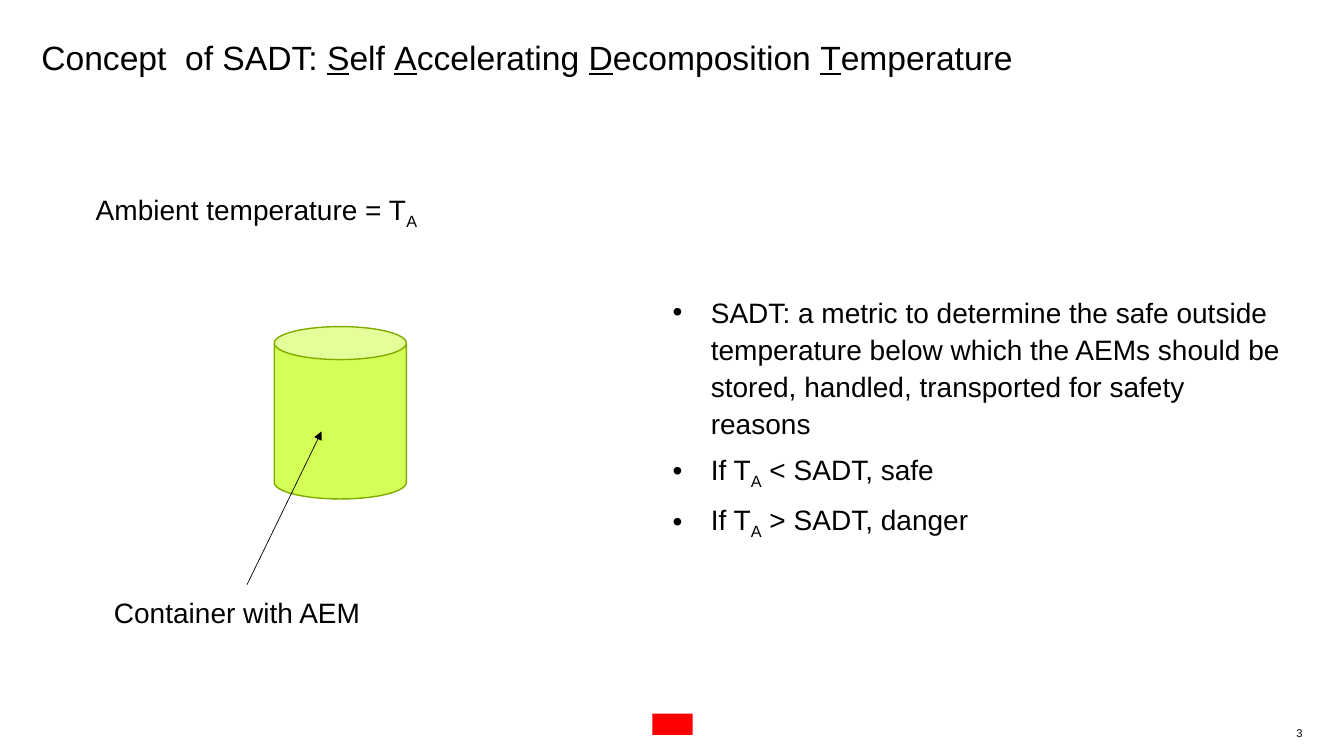
from lxml import etree
from pptx import Presentation
from pptx.dml.color import RGBColor
from pptx.enum import shapes, text
from pptx.oxml.ns import qn
from pptx.util import Inches, Pt

FONT = "Arial"
BLACK, RED, LIME, OLIVE = "000000", "FF0000", "D3FF57", "80AC00"

TITLE = [("Concept  of SADT: ", ""), ("S", "under"), ("elf ", ""), ("A", "under"),
         ("ccelerating ", ""), ("D", "under"), ("ecomposition ", ""),
         ("T", "under"), ("emperature", "")]
POINTS = [
    [("SADT: a metric to determine the safe outside temperature below which "
      "the AEMs should be stored, handled, transported for safety reasons", "")],
    [("If T", ""), ("A", "sub"), (" < SADT, safe", "")],
    [("If T", ""), ("A", "sub"), (" > SADT, danger", "")],
]
AMBIENT = [("Ambient temperature = T", ""), ("A", "sub")]
CONTAINER = [("Container with AEM", "")]
PAGE = [("3", "")]

TITLE_BOX = (0.41, 0.41, 12.49, 0.9)
POINTS_BOX = (6.67, 1.42, 6.25, 5.42)
AMBIENT_BOX = (0.95, 1.91, 3.4, 0.34)
CONTAINER_BOX = (1.13, 5.91, 2.65, 0.34)
PAGE_BOX = (12.68, 7.21, 0.24, 0.13)
CAN_BOX = (2.72, 3.24, 1.31, 1.71)
MARK_BOX = (6.47, 7.08, 0.4, 0.21)
ARROW = (2.45, 5.8, 3.19, 4.28)


def inches(values):
    return [Inches(value) for value in values]


def color(hex_string):
    return RGBColor.from_string(hex_string)


def add_runs(paragraph, pieces, size):
    for words, style in pieces:
        run = paragraph.add_run()
        run.text = words
        run.font.name = FONT
        run.font.size = Pt(size)
        run.font.color.rgb = color(BLACK)
        if style == "under":
            run.font.underline = True
        elif style == "sub":
            run.font._element.set("baseline", "-25000")


def clear_frame(shape, anchor=text.MSO_ANCHOR.TOP, right=0):
    frame = shape.text_frame
    frame.word_wrap = True
    frame.auto_size = text.MSO_AUTO_SIZE.NONE
    frame.vertical_anchor = anchor
    frame.margin_left = frame.margin_top = frame.margin_bottom = 0
    frame.margin_right = Inches(right)
    return frame


def add_label(slide, box, pieces, size, align=text.PP_ALIGN.LEFT):
    frame = clear_frame(slide.shapes.add_textbox(*inches(box)))
    frame.paragraphs[0].alignment = align
    add_runs(frame.paragraphs[0], pieces, size)


def add_filled(slide, kind, box, fill, line=None):
    shape = slide.shapes.add_shape(kind, *inches(box))
    shape.shadow.inherit = False
    shape.fill.solid()
    shape.fill.fore_color.rgb = color(fill)
    if line:
        shape.line.color.rgb = color(line)
        shape.line.width = Pt(1)
    else:
        shape.line.fill.background()


def add_title(slide):
    title = slide.shapes.title
    title.left, title.top, title.width, title.height = inches(TITLE_BOX)
    paragraph = clear_frame(title).paragraphs[0]
    paragraph.alignment = text.PP_ALIGN.LEFT
    paragraph.line_spacing = 0.9
    add_runs(paragraph, TITLE, 24)


def add_points(slide):
    body = slide.shapes.add_textbox(*inches(POINTS_BOX))
    frame = clear_frame(body, text.MSO_ANCHOR.MIDDLE, 0.2)
    for index, pieces in enumerate(POINTS):
        paragraph = frame.add_paragraph() if index else frame.paragraphs[0]
        paragraph.line_spacing = 1.1
        paragraph.space_after = Pt(6)
        properties = paragraph._p.get_or_add_pPr()
        properties.set("marL", str(Inches(0.38)))
        properties.set("indent", str(-Inches(0.38)))
        etree.SubElement(properties, qn("a:buFont"), typeface=FONT)
        etree.SubElement(properties, qn("a:buChar"), char="•")
        add_runs(paragraph, pieces, 20)


def add_arrow(slide):
    arrow = slide.shapes.add_connector(shapes.MSO_CONNECTOR.STRAIGHT, *inches(ARROW))
    arrow.line.color.rgb = color(BLACK)
    arrow.line.width = Pt(0.5)
    etree.SubElement(arrow.line._get_or_add_ln(), qn("a:tailEnd"), type="triangle")
    etree.SubElement(arrow._element.spPr, qn("a:effectLst"))


def main():
    deck = Presentation()
    deck.slide_width, deck.slide_height = inches((13.33, 7.5))
    slide = deck.slides.add_slide(deck.slide_layouts[5])
    add_filled(slide, shapes.MSO_SHAPE.RECTANGLE, MARK_BOX, RED)
    add_label(slide, PAGE_BOX, PAGE, 8, text.PP_ALIGN.RIGHT)
    add_title(slide)
    add_points(slide)
    add_filled(slide, shapes.MSO_SHAPE.CAN, CAN_BOX, LIME, OLIVE)
    add_arrow(slide)
    add_label(slide, CONTAINER_BOX, CONTAINER, 20)
    add_label(slide, AMBIENT_BOX, AMBIENT, 20)
    deck.save("out.pptx")


if __name__ == "__main__":
    main()
